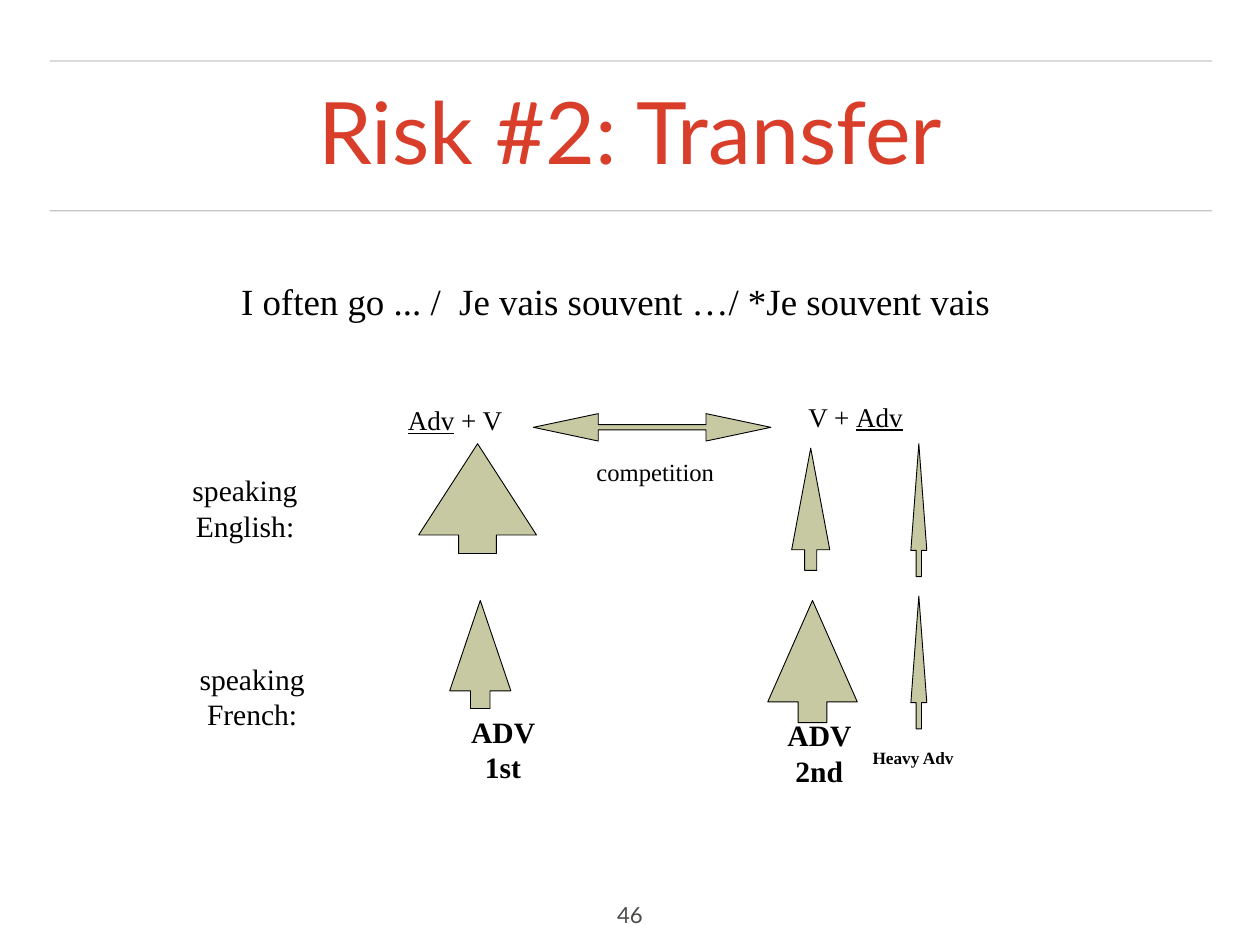
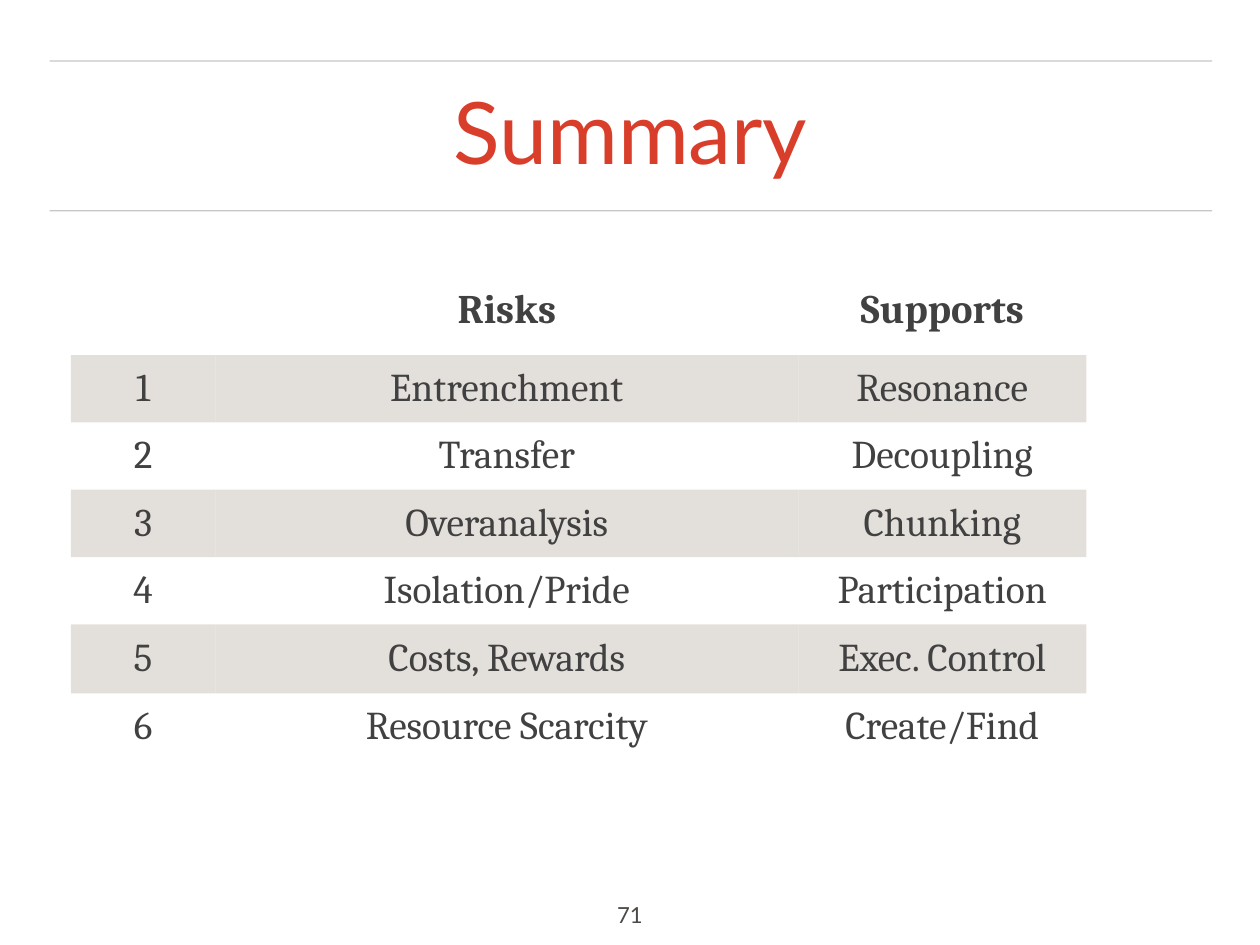
"""Build the transfer diagram and the summary table slides."""
from dataclasses import dataclass

from lxml import etree
from pptx import Presentation
from pptx import util as u
from pptx.dml import color
from pptx.enum import shapes, text
from pptx.oxml import ns


@dataclass(frozen=True)
class Theme:
    """Hold the colours, fonts and type sizes of the deck."""
    title: str = "D93E2B"
    rule: str = "444444"
    ink: str = "000000"
    number: str = "4C4946"
    cell: str = "414141"
    band: str = "C9C3BA"
    arrow: str = "C6C9A1"
    sans: str = "Lato"
    serif: str = "Times New Roman"
    table: str = "Cambria"
    title_pt: int = 70
    example_pt: int = 30
    label_pt: int = 24
    order_pt: int = 22
    note_pt: int = 20
    small_pt: int = 14
    number_pt: int = 18
    head_pt: int = 33
    body_pt: int = 32


T = Theme()
INSET = u.Inches(0.06)
NO_STYLE = "{2D5ABB26-0587-4C30-8999-92F81FD0307C}"
MIDDLE = text.MSO_ANCHOR.MIDDLE
SUMMARY = [
    ("", "Risks", "Supports"),
    ("1", "Entrenchment", "Resonance"),
    ("2", "Transfer", "Decoupling"),
    ("3", "Overanalysis", "Chunking"),
    ("4", "Isolation/Pride", "Participation"),
    ("5", "Costs, Rewards", "Exec. Control"),
    ("6", "Resource Scarcity", "Create/Find"),
]


def assign(obj, values):
    """Set each named value on an object."""
    for name, value in values.items():
        setattr(obj, name, value)


def rgb(value):
    """Turn a hex string into a colour."""
    return color.RGBColor.from_string(value)


def paint(fill, value, alpha=None):
    """Fill with a solid colour, optionally with an opacity in percent."""
    fill.solid()
    fill.fore_color.rgb = rgb(value)
    if alpha:
        clr = fill._xPr.find(ns.qn("a:solidFill"))[0]
        etree.SubElement(clr, ns.qn("a:alpha")).set("val", str(alpha * 1000))


def write(p, runs, size, font, ink, bold=False):
    """Write centred runs, given as text and underline pairs."""
    p.alignment = text.PP_ALIGN.CENTER
    for words, underline in runs:
        r = p.add_run()
        r.text = words
        assign(r.font, dict(size=u.Pt(size), name=font, bold=bold,
                            underline=underline))
        r.font.color.rgb = rgb(ink)


def add_text(s, at, runs, size, font=T.serif, ink=T.ink, bold=False,
             wrap=True, anchor=MIDDLE):
    """Add a text box of fixed size and return its paragraph."""
    tf = s.shapes.add_textbox(*map(u.Inches, at)).text_frame
    assign(tf, dict(
        word_wrap=wrap, vertical_anchor=anchor,
        auto_size=text.MSO_AUTO_SIZE.NONE,
        margin_left=INSET, margin_right=INSET,
        margin_top=INSET, margin_bottom=INSET))
    p = tf.paragraphs[0]
    if isinstance(runs, str):
        runs = [(runs, False)]
    write(p, runs, size, font, ink, bold)
    return p


def add_rule(s, y):
    """Add a pale horizontal rule across the slide."""
    sp = s.shapes.add_connector(
        shapes.MSO_CONNECTOR.STRAIGHT,
        *map(u.Inches, (0.56, y, 13.68, y)))
    sp.line.width = u.Pt(1)
    paint(sp.line.fill, T.rule, 30)
    etree.SubElement(sp._element.spPr, ns.qn("a:effectLst"))


def add_arrow(s, kind, at, adjustments, rotation=0):
    """Add an outlined block arrow."""
    sp = s.shapes.add_shape(kind, *map(u.Inches, at))
    sp.rotation = rotation
    sp.shadow.inherit = False
    for i, value in enumerate(adjustments):
        sp.adjustments[i] = value
    paint(sp.fill, T.arrow)
    paint(sp.line.fill, T.ink)
    sp.line.width = u.Pt(0.75)


def add_up_arrow(s, cx, cy, length, breadth, shaft, head):
    """Add an upward arrow around a centre point."""
    at = (cx - length / 2, cy - breadth / 2, length, breadth)
    add_arrow(s, shapes.MSO_SHAPE.RIGHT_ARROW, at, (shaft, head), 270)


def add_slide(prs, title, number):
    """Add a slide with its rules, title and page number."""
    s = prs.slides.add_slide(prs.slide_layouts[6])
    for y in (2.38, 0.69):
        add_rule(s, y)
    p = add_text(s, (0.56, 0.88, 13.11, 1.33), title, T.title_pt, T.sans,
                 T.title)
    p.line_spacing = 0.9
    add_text(s, (6.86, 10.12, 0.5, 0.44), number, T.number_pt, T.sans,
             T.number, wrap=False, anchor=text.MSO_ANCHOR.TOP)
    return s


def add_table(s, at, widths, heights, rows):
    """Add a table with a bold header and alternate shaded rows."""
    sp = s.shapes.add_table(len(rows), len(widths), *map(u.Inches, at))
    table = sp.table
    assign(table, dict(first_row=False, horz_banding=False))
    for style in sp._element.iter(ns.qn("a:tableStyleId")):
        style.text = NO_STYLE
    for col, width in zip(table.columns, widths):
        col.width = u.Inches(width)
    for i, (row, height) in enumerate(zip(rows, heights)):
        table.rows[i].height = u.Inches(height)
        for j, words in enumerate(row):
            cell = table.cell(i, j)
            assign(cell, dict(
                vertical_anchor=MIDDLE, margin_left=INSET,
                margin_right=INSET, margin_top=INSET, margin_bottom=INSET))
            if i % 2:
                paint(cell.fill, T.band, 50)
            else:
                cell.fill.background()
            if words:
                write(cell.text_frame.paragraphs[0], [(words, False)],
                      T.body_pt if i else T.head_pt, T.table, T.cell, i == 0)


def add_transfer(s):
    """Draw the competition between the two adverb orders."""
    add_text(s, (2.31, 3.08, 9.28, 0.63),
             "I often go ... /  Je vais souvent …/ *Je souvent vais",
             T.example_pt)
    add_text(s, (4.52, 4.49, 1.23, 0.5), [("Adv", True), (" + V", False)],
             T.order_pt, wrap=False)
    add_text(s, (9.05, 4.45, 1.21, 0.5), [("V + ", False), ("Adv", True)],
             T.order_pt, wrap=False)
    add_arrow(s, shapes.MSO_SHAPE.LEFT_RIGHT_ARROW, (6.02, 4.67, 2.68, 0.31),
              (0.191, 2.363))
    add_text(s, (6.59, 5.1, 1.61, 0.44), "competition", T.note_pt)
    add_text(s, (9.75, 8.38, 1.11, 0.36), "Heavy Adv", T.small_pt, bold=True)
    for arrow in (
        (5.39, 5.63, 1.24, 1.33, 0.32, 0.831),
        (9.15, 5.75, 1.38, 0.43, 0.32, 2.668),
        (10.37, 5.76, 1.5, 0.18, 0.333, 6.693),
        (5.42, 7.39, 1.22, 0.69, 0.32, 1.478),
        (9.17, 7.47, 1.38, 1.01, 0.32, 1.133),
        (10.37, 7.48, 1.5, 0.18, 0.333, 6.693),
    ):
        add_up_arrow(s, *arrow)
    for x, y, width, words, bold in (
        (1.61, 5.27, 2.31, "speaking English:", False),
        (1.69, 7.4, 2.31, "speaking French:", False),
        (5.18, 8, 0.99, "ADV 1st", True),
        (8.75, 8.04, 0.99, "ADV 2nd", True),
    ):
        add_text(s, (x, y, width, 0.92), words, T.label_pt, bold=bold)


def main():
    """Build and save both slides."""
    prs = Presentation()
    assign(prs, dict(slide_width=u.Inches(14.22),
                     slide_height=u.Inches(10.67)))
    add_transfer(add_slide(prs, "Risk #2: Transfer", "46"))
    add_table(add_slide(prs, "Summary", "71"), (0.8, 2.99, 11.45, 5.59),
              (1.63, 6.58, 3.25), (1.02, *[0.76] * 4, 0.78, 0.76), SUMMARY)
    prs.save("out.pptx")


if __name__ == "__main__":
    main()
